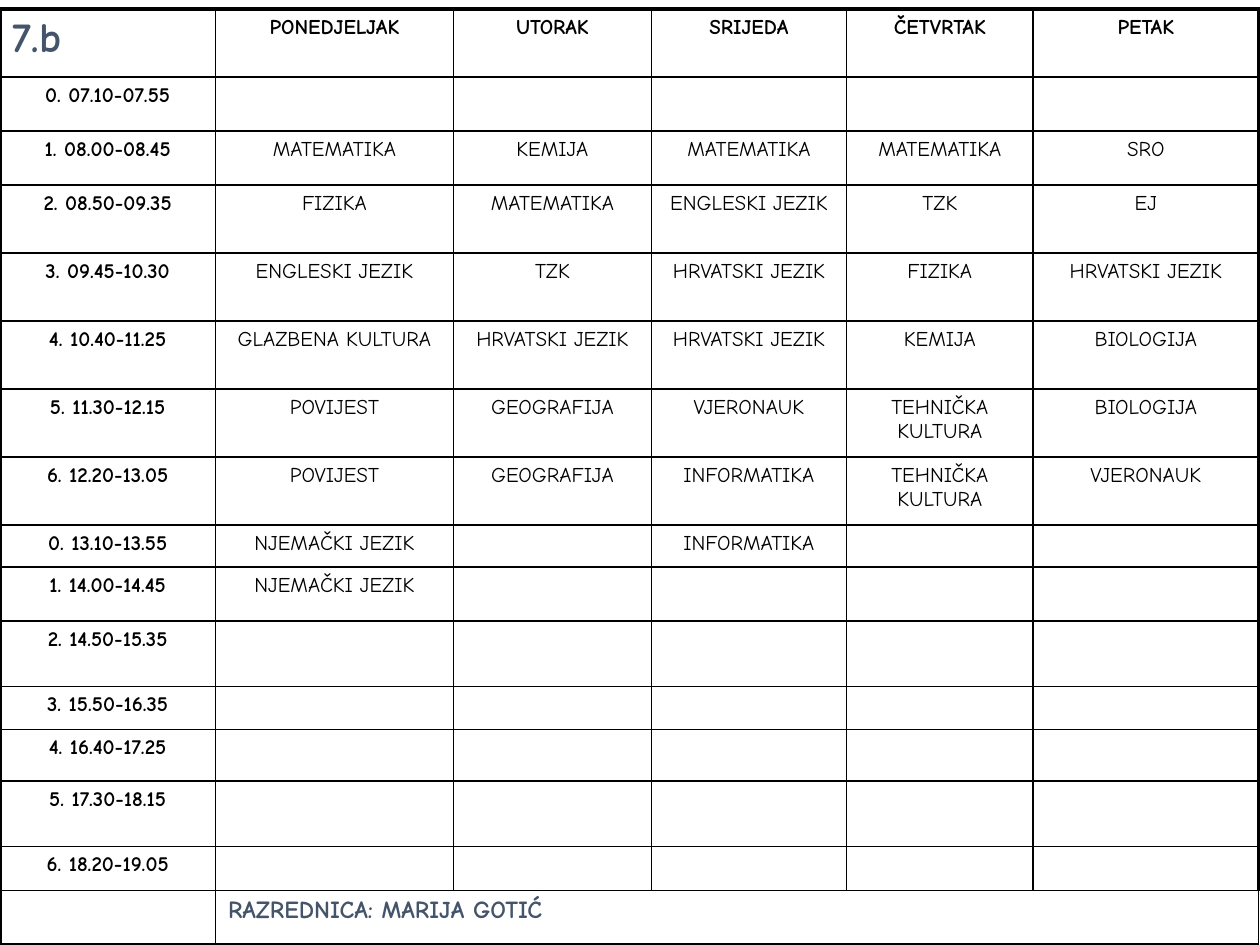
from dataclasses import dataclass

import pptx
import pptx.dml.color
import pptx.enum.text
import pptx.oxml.ns
import pptx.table
import pptx.util
from lxml import etree

Inches = pptx.util.Inches
Pt = pptx.util.Pt
PP_ALIGN = pptx.enum.text.PP_ALIGN
qn = pptx.oxml.ns.qn

BLACK = pptx.dml.color.RGBColor(0x00, 0x00, 0x00)
SLATE = pptx.dml.color.RGBColor(0x44, 0x54, 0x6A)
FONT = "Comic Neue"
THIN, THICK = 1, 2.25

COLUMN_WIDTHS = [1.71, 1.89, 1.57, 1.55, 1.48, 1.79]
DAYS = ["PONEDJELJAK", "UTORAK", "SRIJEDA", "ČETVRTAK", "PETAK"]


@dataclass(frozen=True)
class Period:
    height: float
    time: str
    subjects: tuple[str, ...] = ("",) * len(DAYS)


@dataclass(frozen=True)
class TextStyle:
    size: float = 12
    bold: bool = False
    color: pptx.dml.color.RGBColor = BLACK
    align: PP_ALIGN = PP_ALIGN.CENTER


SUBJECT = TextStyle()
HEADING = TextStyle(bold=True)
CLASS_NAME = TextStyle(24, True, SLATE, PP_ALIGN.LEFT)
TEACHER = TextStyle(14, True, SLATE, PP_ALIGN.LEFT)

HEADER_HEIGHT = 0.54
FOOTER_HEIGHT = 0.43
PERIODS = [
    Period(0.43, "0. 07.10-07.55"),
    Period(0.43, "1. 08.00-08.45", ("MATEMATIKA", "KEMIJA", "MATEMATIKA", "MATEMATIKA", "SRO")),
    Period(0.54, "2. 08.50-09.35", ("FIZIKA", "MATEMATIKA", "ENGLESKI JEZIK", "TZK", "EJ")),
    Period(0.54, "3. 09.45-10.30", ("ENGLESKI JEZIK", "TZK", "HRVATSKI JEZIK", "FIZIKA", "HRVATSKI JEZIK")),
    Period(0.54, "4. 10.40-11.25", ("GLAZBENA KULTURA", "HRVATSKI JEZIK", "HRVATSKI JEZIK", "KEMIJA", "BIOLOGIJA")),
    Period(0.54, "5. 11.30-12.15", ("POVIJEST", "GEOGRAFIJA", "VJERONAUK", "TEHNIČKA KULTURA", "BIOLOGIJA")),
    Period(0.54, "6. 12.20-13.05", ("POVIJEST", "GEOGRAFIJA", "INFORMATIKA", "TEHNIČKA KULTURA", "VJERONAUK")),
    Period(0.33, "0. 13.10-13.55", ("NJEMAČKI JEZIK", "", "INFORMATIKA", "", "")),
    Period(0.43, "1. 14.00-14.45", ("NJEMAČKI JEZIK", "", "", "", "")),
    Period(0.52, "2. 14.50-15.35"),
    Period(0.34, "3. 15.50-16.35"),
    Period(0.41, "4. 16.40-17.25"),
    Period(0.52, "5. 17.30-18.15"),
    Period(0.35, "6. 18.20-19.05"),
]
ROW_HEIGHTS = [HEADER_HEIGHT, *(period.height for period in PERIODS), FOOTER_HEIGHT]


def write_cell(cell: pptx.table._Cell, text: str, style: TextStyle) -> None:
    para = cell.text_frame.paragraphs[0]
    para.alignment = style.align
    para.font.name = FONT
    para.font.size = Pt(style.size)
    para.font.bold = style.bold
    para.font.color.rgb = style.color
    if text:
        para.add_run().text = text
    else:
        # An empty paragraph takes its line height from its end mark.
        etree.SubElement(para._p, qn("a:endParaRPr"), sz=str(int(style.size * 100)))


def add_border(cell: pptx.table._Cell, side: str, width: float) -> None:
    properties = cell._tc.get_or_add_tcPr()
    line = etree.SubElement(properties, qn(f"a:ln{side}"), w=str(int(Pt(width))))
    fill = etree.SubElement(line, qn("a:solidFill"))
    etree.SubElement(fill, qn("a:srgbClr"), val=str(BLACK))


def frame_cells(table: pptx.table.Table) -> None:
    """Draw thin inner rules and a thick outer frame."""
    last_row, last_column = len(table.rows) - 1, len(table.columns) - 1
    for r in range(last_row + 1):
        for c in range(last_column + 1):
            cell = table.cell(r, c)
            outer = {"L": c == 0, "R": c == last_column, "T": r == 0, "B": r == last_row}
            for side, is_outer in outer.items():
                add_border(cell, side, THICK if is_outer else THIN)
            cell.fill.background()


def add_timetable(page: pptx.slide.Slide) -> None:
    table = page.shapes.add_table(
        len(ROW_HEIGHTS), len(COLUMN_WIDTHS),
        Inches(0), Inches(0.07), Inches(10), Inches(sum(ROW_HEIGHTS)),
    ).table
    table.first_row = False
    table.horz_banding = False
    for column, width in zip(table.columns, COLUMN_WIDTHS):
        column.width = Inches(width)
    for row, height in zip(table.rows, ROW_HEIGHTS):
        row.height = Inches(height)

    frame_cells(table)
    write_cell(table.cell(0, 0), "7.b", CLASS_NAME)
    for c, day in enumerate(DAYS, start=1):
        write_cell(table.cell(0, c), day, HEADING)
    for r, period in enumerate(PERIODS, start=1):
        write_cell(table.cell(r, 0), period.time, HEADING)
        for c, subject in enumerate(period.subjects, start=1):
            write_cell(table.cell(r, c), subject, SUBJECT)

    footer = len(ROW_HEIGHTS) - 1
    table.cell(footer, 1).merge(table.cell(footer, len(DAYS)))
    write_cell(table.cell(footer, 0), "", SUBJECT)
    write_cell(table.cell(footer, 1), "RAZREDNICA: MARIJA GOTIĆ", TEACHER)


def main() -> None:
    deck = pptx.Presentation()
    deck.slide_width, deck.slide_height = Inches(10), Inches(7.5)
    page = deck.slides.add_slide(deck.slide_layouts[6])
    add_timetable(page)
    deck.save("out.pptx")


if __name__ == "__main__":
    main()
